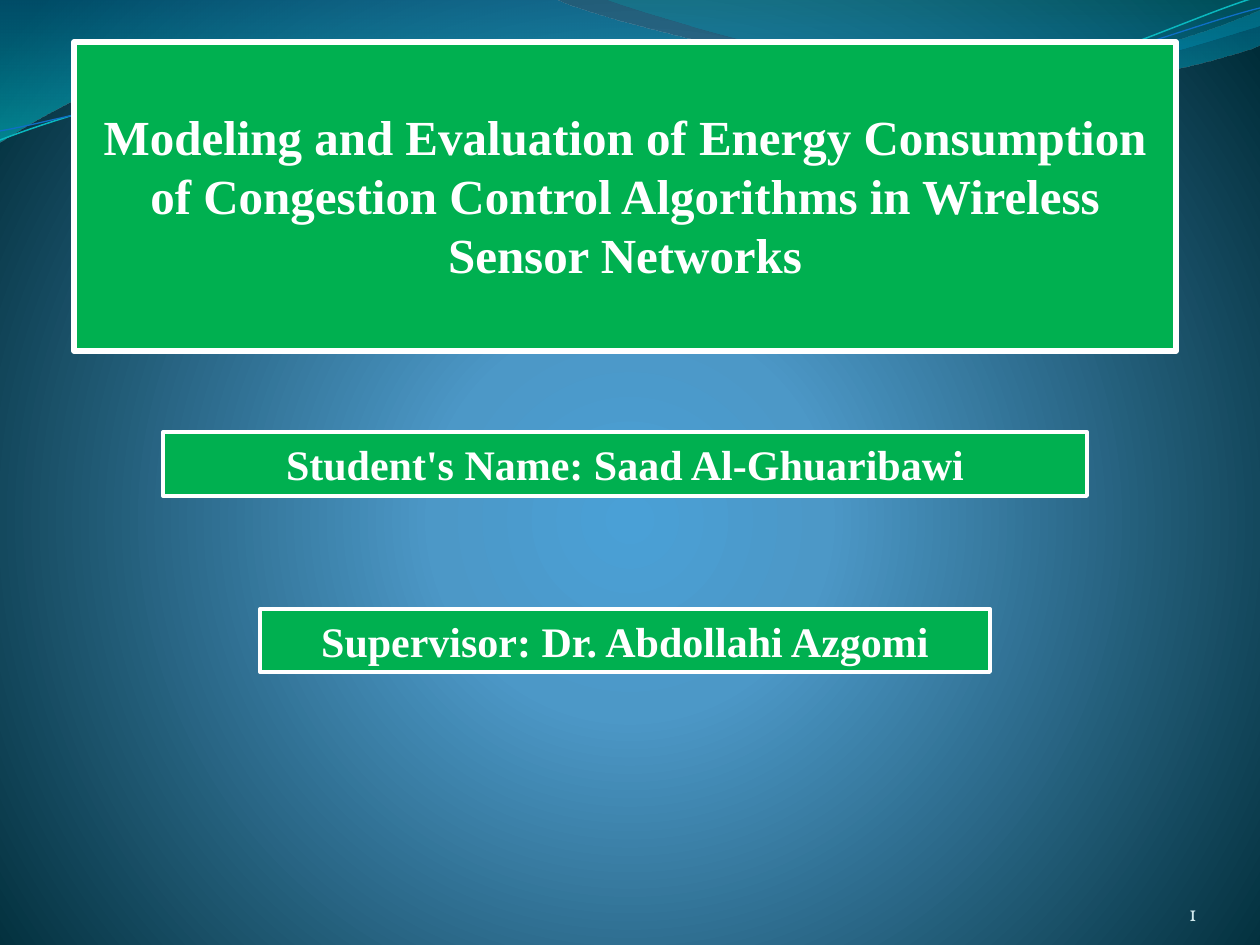
import pptx
import pptx.dml.color
import pptx.enum.shapes
import pptx.enum.text
import pptx.oxml
import pptx.oxml.ns
import pptx.util

PX = 914400 / 126
ALIGN = pptx.enum.text.PP_ALIGN
ANCHOR = pptx.enum.text.MSO_ANCHOR
COLORS = {
    "green": "00B050", "white": "FFFFFF", "number": "D1EAEE",
    "glow": "4AA0D6", "mid": "4C98C7", "night": "002C38",
    "blue": "0074A1", "aqua": "00C6CF", "teal": "00A1A9", "azure": "008BBF",
    "teal_line": "0AB8BF", "blue_line": "0F6FC6",
}
LINEAR = '<a:lin ang="5400000" scaled="1"/>'
RADIAL = ('<a:path path="circle"><a:fillToRect l="10000" t="110000" '
          'r="10000" b="100000"/></a:path>')


def emu(px):
    return round(px * PX)


def rgb(name):
    return pptx.dml.color.RGBColor.from_string(COLORS[name])


def set_gradient(grad, stops, shade):
    """Replace a gradFill element; stops are (percent, colour, opacity percent)."""
    gs = "".join(
        f'<a:gs pos="{pos * 1000}"><a:srgbClr val="{COLORS[color]}">'
        + (f'<a:alpha val="{alpha * 1000}"/>' if alpha < 100 else "")
        + '</a:srgbClr></a:gs>'
        for pos, color, alpha in stops)
    new = pptx.oxml.parse_xml(
        f'<a:gradFill {pptx.oxml.ns.nsdecls("a")} rotWithShape="1">'
        f'<a:gsLst>{gs}</a:gsLst>{shade}</a:gradFill>')
    grad.getparent().replace(grad, new)


def bend(sp, segments):
    """Turn each run of three lines that stands for a Bezier segment into a curve."""
    lines = iter(sp.element.xpath(".//a:pathLst/a:path/a:lnTo"))
    for seg in segments:
        first = next(lines)
        if len(seg) == 2:
            continue
        curve = pptx.oxml.parse_xml(
            f'<a:cubicBezTo {pptx.oxml.ns.nsdecls("a")}/>')
        first.addprevious(curve)
        for line in (first, next(lines), next(lines)):
            curve.append(line[0])
            line.getparent().remove(line)


def write(tf, text, size, color="white", font="Times New Roman", bold=True,
          align=ALIGN.CENTER, anchor=ANCHOR.MIDDLE):
    tf.word_wrap = True
    tf.auto_size = pptx.enum.text.MSO_AUTO_SIZE.NONE
    tf.vertical_anchor = anchor
    p = tf.paragraphs[0]
    p.alignment = align
    r = p.add_run()
    r.text = text
    r.font.size = pptx.util.Pt(size)
    r.font.name = font
    r.font.bold = bold
    r.font.color.rgb = rgb(color)


class Deck:
    def __init__(self, width, height):
        self.prs = pptx.Presentation()
        self.prs.slide_width = emu(width)
        self.prs.slide_height = emu(height)
        self.slide = self.prs.slides.add_slide(self.prs.slide_layouts[5])
        self.shapes = self.slide.shapes

    def background(self, stops):
        self.slide.background.fill.gradient()
        grad = self.slide.element.xpath(".//p:bgPr/a:gradFill")[0]
        set_gradient(grad, stops, RADIAL)

    def outline(self, start, segments, closed):
        """Draw segments: 2 numbers are a line, 6 are a cubic Bezier curve."""
        points = [seg[i:i + 2] for seg in segments for i in range(0, len(seg), 2)]
        builder = self.shapes.build_freeform(*start, scale=PX)
        builder.add_line_segments(points, close=closed)
        sp = builder.convert_to_shape()
        sp.shadow.inherit = False
        bend(sp, segments)
        return sp

    def wave(self, start, segments, stops):
        sp = self.outline(start, segments, True)
        sp.line.fill.background()
        sp.fill.gradient()
        set_gradient(sp.element.xpath("./p:spPr/a:gradFill")[0], stops, LINEAR)

    def strand(self, start, segments, color, weight):
        sp = self.outline(start, segments, False)
        sp.fill.background()
        self.border(sp, color, weight)

    def border(self, sp, color, weight):
        sp.line.color.rgb = rgb(color)
        sp.line.width = pptx.util.Pt(weight)

    def panel(self, sp, text, size, weight):
        sp.fill.solid()
        sp.fill.fore_color.rgb = rgb("green")
        self.border(sp, "white", weight)
        write(sp.text_frame, text, size)

    def title(self, text, left, top, width, height):
        sp = self.shapes.title
        sp.left, sp.top, sp.width, sp.height = map(emu, (left, top, width, height))
        self.panel(sp, text, 28, 3)
        sp.text_frame.margin_bottom = emu(9)
        sp.element.getparent().append(sp.element)  # in front of the waves

    def name_box(self, text, left, top, width, height):
        sp = self.shapes.add_shape(pptx.enum.shapes.MSO_SHAPE.RECTANGLE,
                                   *map(emu, (left, top, width, height)))
        sp.shadow.inherit = False
        self.panel(sp, text, 24, 2.25)

    def page_number(self, text, left, top, width, height):
        sp = self.shapes.add_textbox(*map(emu, (left, top, width, height)))
        tf = sp.text_frame
        tf.margin_left = tf.margin_right = tf.margin_top = tf.margin_bottom = 0
        write(tf, text, 12, color="number", font="Vollkorn", bold=False,
              align=ALIGN.RIGHT, anchor=ANCHOR.BOTTOM)


def main():
    deck = Deck(1260, 945)
    deck.background([(0, "glow", 100), (25, "mid", 100), (100, "night", 100)])
    deck.wave((0, 0), [
        (554, -1), (600, 21, 837, 79, 955, 79), (1075, 79, 1207, 33, 1260, 11),
        (1261, 45), (1239, 55, 1096, 96, 940, 95), (784, 95, 481, 35, 324, 43),
        (163, 45, 58, 105, -1, 142),
    ], [(0, "blue", 45), (100, "aqua", 55)])
    deck.wave((604, -1), [
        (641, 14, 859, 78, 969, 82), (1079, 87, 1211, 40, 1260, 26), (1260, 0),
    ], [(0, "teal", 30), (80, "azure", 45)])
    deck.strand((0, 140), [
        (60, 117, 199, 72, 349, 66), (498, 59, 747, 112, 898, 101),
        (1050, 89, 1182, 19, 1257, -3),
    ], "teal_line", 0.85)
    deck.strand((0, 131), [
        (59, 121, 207, 77, 357, 71), (508, 64, 752, 106, 903, 95),
        (1053, 84, 1186, 26, 1260, 8),
    ], "blue_line", 0.75)

    deck.title("Modeling and Evaluation of Energy Consumption of Congestion "
               "Control Algorithms in Wireless Sensor Networks", 74, 42, 1102, 309)
    deck.name_box("Student's Name: Saad Al-Ghuaribawi", 163, 432, 924, 64)
    deck.name_box("Supervisor: Dr. Abdollahi Azgomi", 260, 609, 730, 63)
    deck.page_number("1", 1092, 876, 105, 50)
    deck.prs.save("out.pptx")


if __name__ == "__main__":
    main()
